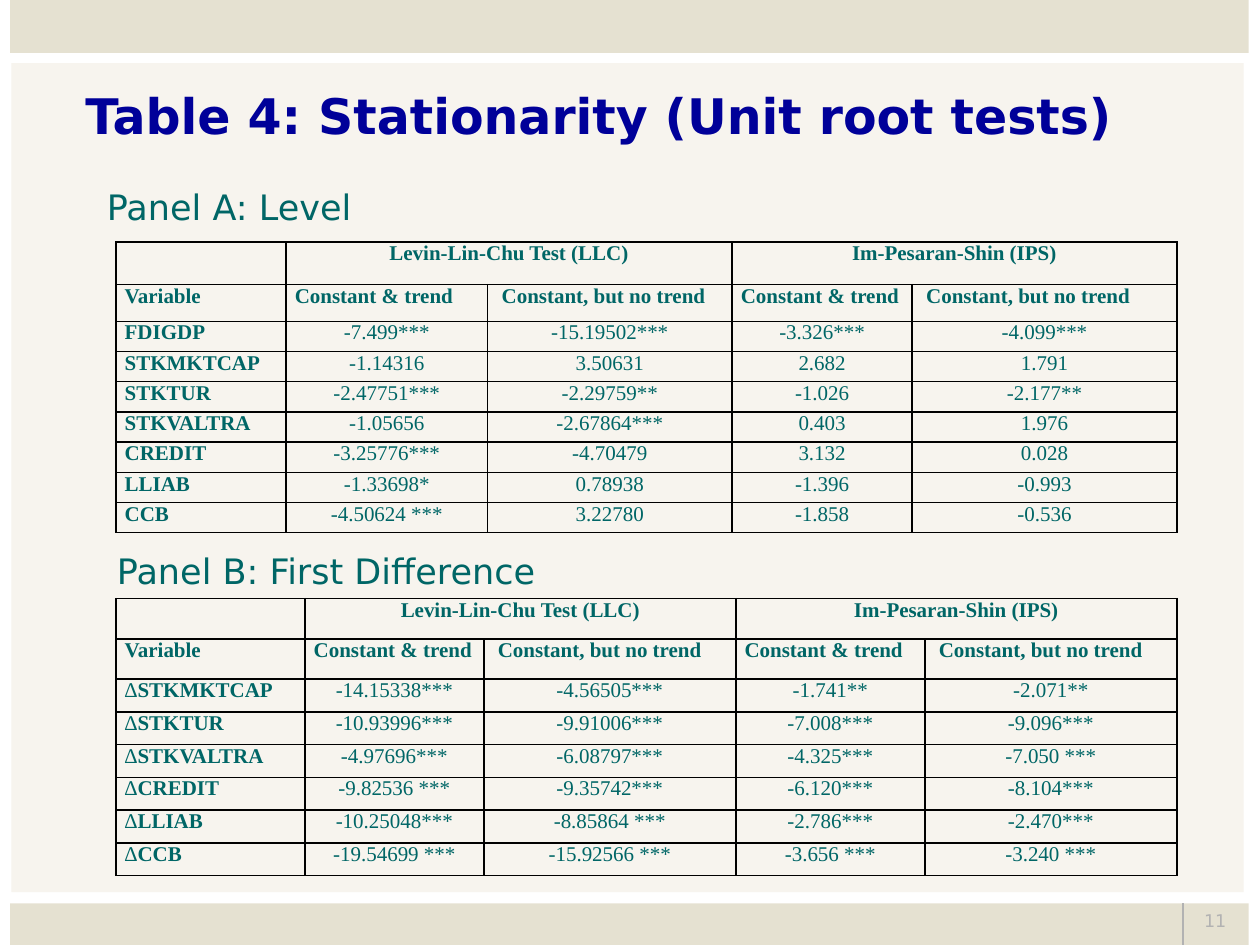
"""Build the slide with the two panels of unit root test results."""
from lxml import etree
from pptx import Presentation
from pptx.dml.color import RGBColor
from pptx.enum.shapes import MSO_CONNECTOR, MSO_SHAPE
from pptx.enum.text import MSO_ANCHOR, MSO_AUTO_SIZE, PP_ALIGN
from pptx.oxml import parse_xml
from pptx.oxml.ns import nsdecls, qn
from pptx.util import Inches, Pt

LEFT, CENTER, RIGHT = PP_ALIGN.LEFT, PP_ALIGN.CENTER, PP_ALIGN.RIGHT
TOP, MIDDLE = MSO_ANCHOR.TOP, MSO_ANCHOR.MIDDLE
RECTANGLE, STRAIGHT = MSO_SHAPE.RECTANGLE, MSO_CONNECTOR.STRAIGHT
FIT_SHAPE = MSO_AUTO_SIZE.SHAPE_TO_FIT_TEXT

HEADING_FONT, TABLE_FONT = "DejaVu Sans", "Times New Roman"
COLORS = {
    "band": "E5E1D1",
    "panel": "F7F4EE",
    "title": "000099",
    "text": "006666",
    "muted": "B2B2B2",
    "border": "000000",
}

BACKDROPS = [
    ("band", (0.08, 7.17, 9.83, 0.33)),
    ("panel", (0.09, 0.5, 9.78, 6.58)),
    ("band", (0.08, 0, 9.83, 0.42)),
]
TITLE = "Table 4: Stationarity (Unit root tests)"
PAGE_NUMBER = "11"
TEST_NAMES = ["Levin-Lin-Chu Test (LLC)", "Im-Pesaran-Shin (IPS)"]
COLUMN_NAMES = ["Variable"] + ["Constant & trend", " Constant, but no trend"] * 2
DELTA = "∆"

PANELS = [
    {
        "heading": "Panel A: Level",
        "heading_box": (0.75, 1.42, 2.75, 0.44),
        "top": 1.92,
        "columns": [1.35, 1.6, 1.94, 1.43, 2.1],
        "header_heights": [0.34, 0.29],
        "row_height": 0.24,
        "rows": [
            ("FDIGDP", "-7.499***", "-15.19502***", "-3.326***", "-4.099***"),
            ("STKMKTCAP", "-1.14316", "3.50631", "2.682", "1.791"),
            ("STKTUR", "-2.47751***", "-2.29759**", "-1.026", "-2.177**"),
            ("STKVALTRA", "-1.05656", "-2.67864***", "0.403", "1.976"),
            ("CREDIT", "-3.25776***", "-4.70479", "3.132", "0.028"),
            ("LLIAB", "-1.33698*", "0.78938", "-1.396", "-0.993"),
            ("CCB", "-4.50624 ***", "3.22780", "-1.858", "-0.536"),
        ],
    },
    {
        "heading": "Panel B: First Difference",
        "heading_box": (0.83, 4.31, 4.92, 0.44),
        "top": 4.75,
        "columns": [1.5, 1.42, 2, 1.5, 2],
        "header_heights": [0.32, 0.32],
        "row_height": 0.26,
        "rows": [
            ("∆STKMKTCAP", "-14.15338***", "-4.56505***", "-1.741**", "-2.071**"),
            ("∆STKTUR", "-10.93996***", "-9.91006***", "-7.008***", "-9.096***"),
            ("∆STKVALTRA", "-4.97696***", "-6.08797***", "-4.325***", "-7.050 ***"),
            ("∆CREDIT", "-9.82536 ***", "-9.35742***", "-6.120***", "-8.104***"),
            ("∆LLIAB", "-10.25048***", "-8.85864 ***", "-2.786***", "-2.470***"),
            ("∆CCB", "-19.54699 ***", "-15.92566 ***", "-3.656 ***", "-3.240 ***"),
        ],
    },
]
TABLE_LEFT = 0.92


def color(name):
    return RGBColor.from_string(COLORS[name])


def format_run(run, font, size, color_name, bold=False):
    run.font.name = font
    run.font.size = Pt(size)
    run.font.bold = bold
    run.font.color.rgb = color(color_name)


def add_text(slide, text, box, size, color_name, bold=False, align=LEFT, anchor=TOP):
    shape = slide.shapes.add_textbox(*map(Inches, box))
    text_frame = shape.text_frame
    text_frame.word_wrap = True
    text_frame.vertical_anchor = anchor
    text_frame.text = text
    paragraph = text_frame.paragraphs[0]
    paragraph.alignment = align
    format_run(paragraph.runs[0], HEADING_FONT, size, color_name, bold)
    return shape


def add_backdrop(slide):
    for color_name, box in BACKDROPS:
        shape = slide.shapes.add_shape(RECTANGLE, *map(Inches, box))
        shape.shadow.inherit = False
        shape.fill.solid()
        shape.fill.fore_color.rgb = color(color_name)
        shape.line.fill.background()
    ends = map(Inches, (9.39, 7.17, 9.39, 7.5))
    divider = slide.shapes.add_connector(STRAIGHT, *ends)
    divider.line.color.rgb = color("muted")
    divider.line.width = Pt(0.75)
    etree.SubElement(divider._element.spPr, qn("a:effectLst"))


def style_cell(cell):
    cell.margin_left = cell.margin_right = Inches(0.07)
    cell.margin_top = cell.margin_bottom = 0
    cell.fill.background()
    properties = cell._tc.get_or_add_tcPr()
    for position, side in enumerate(("lnL", "lnR", "lnT", "lnB")):
        border = parse_xml(
            f'<a:{side} {nsdecls("a")} w="{Pt(1)}"><a:solidFill>'
            f'<a:srgbClr val="{COLORS["border"]}"/></a:solidFill></a:{side}>'
        )
        properties.insert(position, border)


def write_cell(cell, text, bold, align=LEFT):
    paragraph = cell.text_frame.paragraphs[0]
    paragraph.alignment = align
    if text.startswith(DELTA):
        delta = paragraph.add_run()
        delta.text = DELTA
        format_run(delta, TABLE_FONT, 12, "text")
    run = paragraph.add_run()
    run.text = text.removeprefix(DELTA)
    format_run(run, TABLE_FONT, 12, "text", bold)


def add_panel(slide, panel):
    heading = add_text(slide, panel["heading"], panel["heading_box"], 20, "text")
    heading.text_frame.auto_size = FIT_SHAPE

    columns, rows = panel["columns"], panel["rows"]
    heights = panel["header_heights"] + [panel["row_height"]] * len(rows)
    box = (TABLE_LEFT, panel["top"], sum(columns), sum(heights))
    frame = slide.shapes.add_table(len(heights), len(columns), *map(Inches, box))
    table = frame.table
    table.first_row = table.horz_banding = False
    for column, width in zip(table.columns, columns):
        column.width = Inches(width)
    for row, height in zip(table.rows, heights):
        row.height = Inches(height)
    for cell in table.iter_cells():
        style_cell(cell)

    for index, name in enumerate(TEST_NAMES):
        first = 1 + 2 * index
        table.cell(0, first).merge(table.cell(0, first + 1))
        write_cell(table.cell(0, first), name, True, CENTER)
    for column, name in enumerate(COLUMN_NAMES):
        write_cell(table.cell(1, column), name, True)
    for row, (variable, *values) in enumerate(rows, start=2):
        write_cell(table.cell(row, 0), variable, True)
        for column, value in enumerate(values, start=1):
            write_cell(table.cell(row, column), value, False, CENTER)


def main():
    presentation = Presentation()
    presentation.slide_width = Inches(10)
    presentation.slide_height = Inches(7.5)
    slide = presentation.slides.add_slide(presentation.slide_layouts[6])
    add_backdrop(slide)
    add_text(slide, TITLE, (0.58, 0.5, 8.92, 0.83), 28, "title", True, anchor=MIDDLE)
    add_text(slide, PAGE_NUMBER, (9.39, 7.17, 0.44, 0.33), 10, "muted", align=RIGHT)
    for panel in PANELS:
        add_panel(slide, panel)
    presentation.save("out.pptx")


if __name__ == "__main__":
    main()
